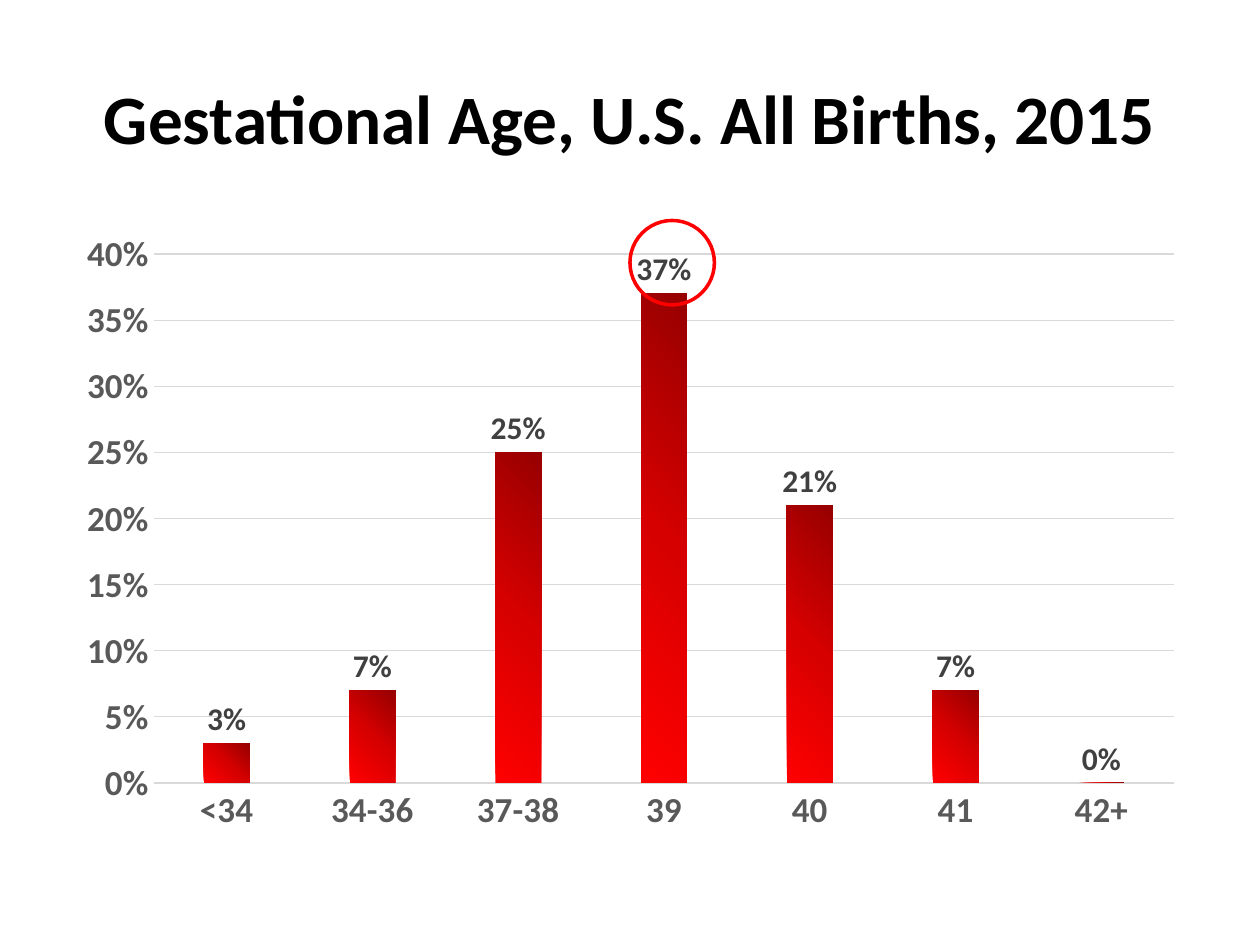
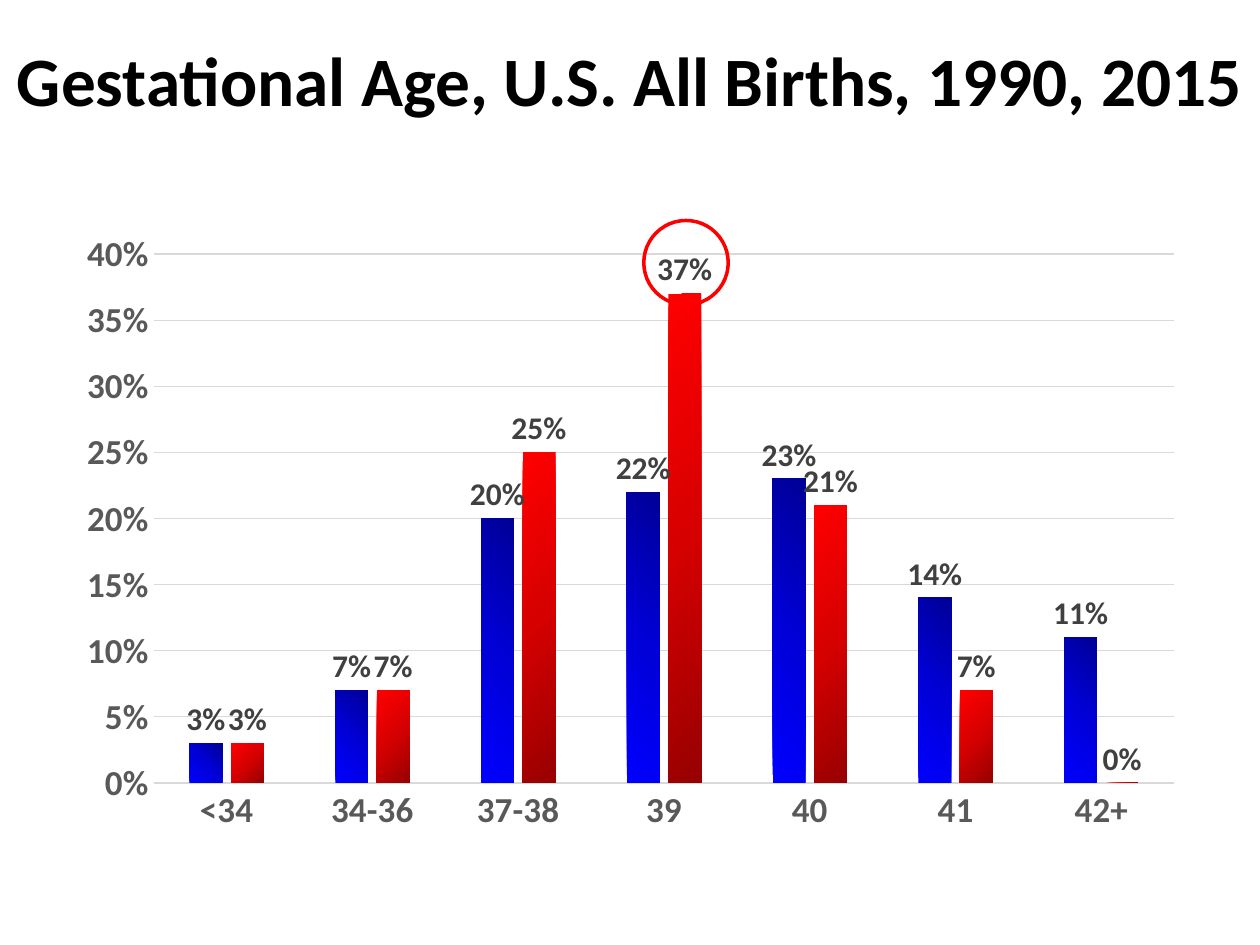
from pptx import Presentation
from pptx.chart.data import CategoryChartData
from pptx.dml.color import RGBColor
from pptx.enum.chart import XL_CHART_TYPE, XL_LABEL_POSITION, XL_TICK_MARK
from pptx.enum.shapes import MSO_SHAPE
from pptx.enum.text import MSO_ANCHOR, PP_ALIGN
from pptx.oxml import parse_xml
from pptx.oxml.ns import nsdecls, qn
from pptx.util import Inches, Pt

FONT = "Calibri"
COLORS = {"title": "000000", "axis": "595959", "label": "404040",
          "grid": "D9D9D9", "circle": "FF0000"}
RED = ("970000", "D70000", "FF0000")
BLUE = ("000097", "0000D7", "0000FF")
# Dark corner of each bar, as the gradient's focus rectangle
TOP_RIGHT = 'l="100000" b="100000"'
BOTTOM_RIGHT = 'l="100000" t="100000"'

AGES = ["<34", "34-36", "37-38", "39", "40", "41", "42+"]
BIRTHS_1990 = [0.03, 0.07, 0.20, 0.22, 0.23, 0.14, 0.11]
BIRTHS_2015 = [0.03, 0.07, 0.25, 0.37, 0.21, 0.07, 0]

CHART_BOX = (0.5, 1.75, 9, 4.95)
# Inner plot area as fractions of the chart box
PLOT = {"x": 0.08, "y": 0.054, "w": 0.9, "h": 0.848}


def rgb(name):
    return RGBColor.from_string(COLORS[name])


def style_font(font, size, color):
    font.name, font.size, font.bold = FONT, Pt(size), True
    font.color.rgb = rgb(color)


def add_title(s, text, box):
    tf = s.shapes.add_textbox(*map(Inches, box)).text_frame
    tf.word_wrap = True
    tf.vertical_anchor = MSO_ANCHOR.MIDDLE
    tf.text = text
    p = tf.paragraphs[0]
    p.alignment = PP_ALIGN.CENTER
    style_font(p.runs[0].font, 39.6, "title")


def fill_gradient(series, shades, focus):
    series.format.line.fill.background()
    stops = "".join(f'<a:gs pos="{i * 50000}"><a:srgbClr val="{shade}"/></a:gs>'
                    for i, shade in enumerate(shades))
    series._element.find(qn("c:spPr")).insert(0, parse_xml(
        f'<a:gradFill {nsdecls("a")} rotWithShape="1"><a:gsLst>{stops}</a:gsLst>'
        f'<a:path path="circle"><a:fillToRect {focus}/></a:path></a:gradFill>'))


def style_axes(chart):
    for axis in (chart.category_axis, chart.value_axis):
        axis.major_tick_mark = axis.minor_tick_mark = XL_TICK_MARK.NONE
        style_font(axis.tick_labels.font, 20, "axis")
    value = chart.value_axis
    value.minimum_scale, value.maximum_scale, value.major_unit = 0, 0.4, 0.05
    value.tick_labels.number_format = "0%"
    value.tick_labels.number_format_is_linked = False
    value.format.line.fill.background()
    for line in (chart.category_axis.format.line, value.major_gridlines.format.line):
        line.color.rgb = rgb("grid")
        line.width = Pt(0.75)


def place_plot(chart):
    plot_area = chart._chartSpace.chart.plotArea
    for layout in plot_area.findall(qn("c:layout")):
        plot_area.remove(layout)
    modes = '<c:xMode val="edge"/><c:yMode val="edge"/>'
    sizes = "".join(f'<c:{key} val="{val}"/>' for key, val in PLOT.items())
    plot_area.insert(0, parse_xml(
        f'<c:layout {nsdecls("c")}><c:manualLayout><c:layoutTarget val="inner"/>'
        f'{modes}{sizes}</c:manualLayout></c:layout>'))


def add_births_chart(s, box, series_list):
    data = CategoryChartData(number_format="0%")
    data.categories = AGES
    for i, (values, _, _) in enumerate(series_list, 1):
        data.add_series(f"Series {i}", values)
    chart = s.shapes.add_chart(XL_CHART_TYPE.COLUMN_CLUSTERED,
                               *map(Inches, box), data).chart
    chart.has_title = chart.has_legend = False
    chart.font.name, chart.font.size = FONT, Pt(10)
    style_axes(chart)
    place_plot(chart)

    # Bars and their labels
    plot = chart.plots[0]
    plot.vary_by_categories = False
    plot.gap_width, plot.overlap = 219, -27
    for series, (_, shades, focus) in zip(plot.series, series_list):
        series.invert_if_negative = False
        fill_gradient(series, shades, focus)
        labels = series.data_labels
        labels.show_value = True
        labels.number_format = "0%"
        labels.number_format_is_linked = False
        labels.position = XL_LABEL_POSITION.OUTSIDE_END
        style_font(labels.font, 18, "label")


def add_peak_circle(s, left, top):
    sp = s.shapes.add_shape(MSO_SHAPE.OVAL, Inches(left), Inches(top),
                            Inches(0.67), Inches(0.67))
    sp.shadow.inherit = False
    sp.fill.background()
    sp.line.color.rgb = rgb("circle")
    sp.line.width = Pt(2)


def add_births_slide(prs, title, title_box, series_list, circle_offset):
    s = prs.slides.add_slide(prs.slide_layouts[6])
    add_title(s, title, title_box)
    add_births_chart(s, CHART_BOX, series_list)
    add_peak_circle(s, CHART_BOX[0] + circle_offset, CHART_BOX[1])


def main():
    prs = Presentation()
    prs.slide_width, prs.slide_height = Inches(10), Inches(7.5)
    add_births_slide(prs, "Gestational Age, U.S. All Births, 2015",
                     (0.5, 0.3, 9, 1.25),
                     [(BIRTHS_2015, RED, TOP_RIGHT)], 4.5)
    add_births_slide(prs, "Gestational Age, U.S. All Births, 1990, 2015",
                     (0, 0, 10, 1.25),
                     [(BIRTHS_1990, BLUE, TOP_RIGHT),
                      (BIRTHS_2015, RED, BOTTOM_RIGHT)], 4.61)
    prs.save("out.pptx")


if __name__ == "__main__":
    main()
